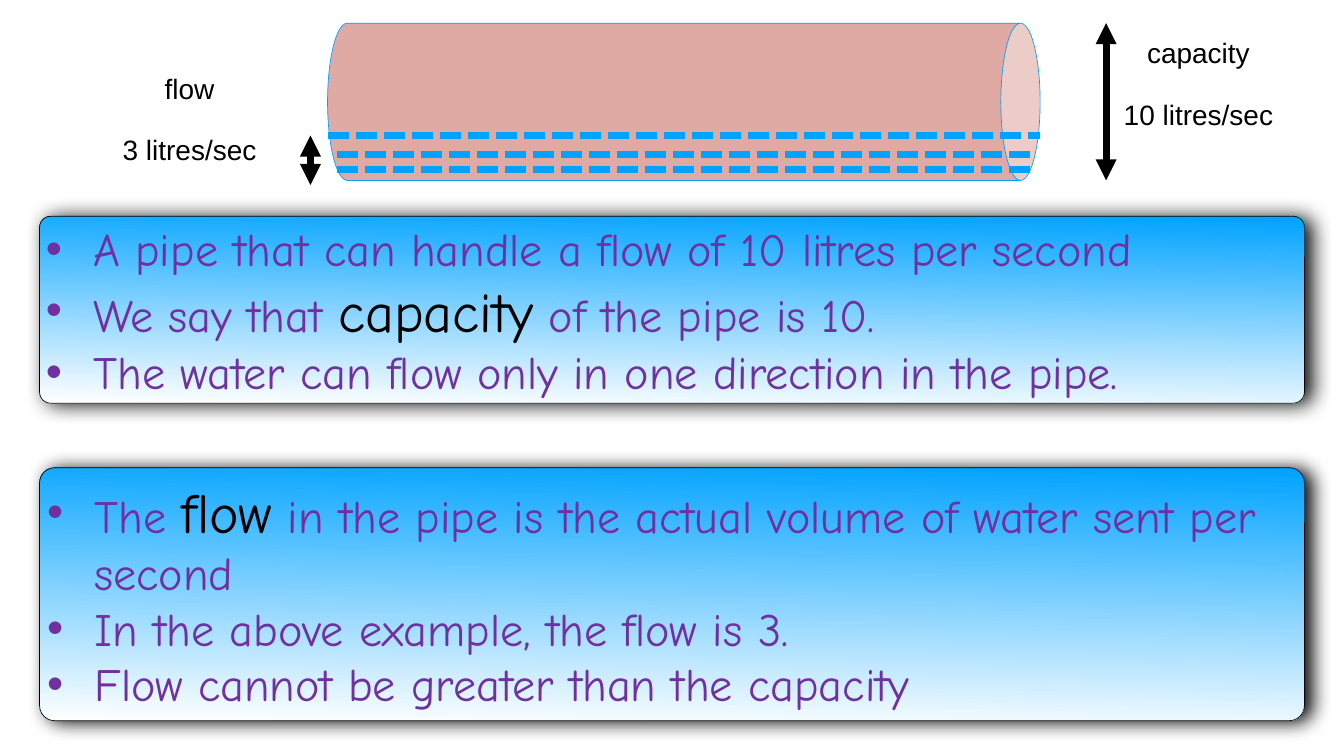
from lxml.etree import SubElement
from pptx import Presentation
from pptx.dml.color import RGBColor
from pptx.enum.dml import MSO_LINE
from pptx.enum.shapes import MSO_CONNECTOR, MSO_SHAPE
from pptx.enum.text import MSO_ANCHOR, PP_ALIGN
from pptx.oxml.ns import qn
from pptx.util import Inches, Pt

# Content: each paragraph is a list of (text, is key term) runs
LABELS = [  # centre x, centre y, lines
    (23.78, 1.7, ["capacity", "10 litres/sec"]),
    (3.76, 2.4, ["flow", "3 litres/sec"]),
]
PANELS = [  # top, height, paragraphs
    (4.29, 3.71, [
        [("A pipe that can handle a flow of 10 litres per second", False)],
        [("We say that ", False), ("capacity", True), (" of the pipe is 10.", False)],
        [("The water can flow only in one direction in the pipe.", False)],
    ]),
    (9.28, 5.02, [
        [("The ", False), ("flow", True),
         (" in the pipe is the actual volume of water sent per second", False)],
        [("In the above example, the flow is 3.", False)],
        [("Flow cannot be greater than the capacity", False)],
    ]),
]

# Style and layout, in inches
COLORS = {"water": "00A2FF", "pipe": "A61500", "text": "7030A0",
          "black": "000000", "white": "FFFFFF"}
W, H = 26.67, 15
PANEL_W = 25.1
PANEL_X = (W - PANEL_W) / 2
PIPE_X, PIPE_Y, PIPE_W, PIPE_H = 6.5, 0.46, 14.14, 3.12
WATER = [(2.69, 0), (3.07, 0.18), (3.37, 0.18)]  # y, inset from the pipe's ends
ARROWS = [(21.95, PIPE_Y, PIPE_Y + PIPE_H), (6.16, WATER[0][0], 3.67)]
LABEL_W, LABEL_H = 3.2, 2.59
PAD, INDENT = 0.06, 0.94


def rgb(name):
    return RGBColor.from_string(COLORS[name])


def add_run(p, text, font="Arial", size=40, color="black"):
    r = p.add_run()
    r.text = text
    r.font.name, r.font.size = font, Pt(size)
    r.font.color.rgb = rgb(color)


def setup_frame(sp, wrap):
    tf = sp.text_frame
    tf.word_wrap = wrap
    tf.vertical_anchor = MSO_ANCHOR.MIDDLE
    tf.margin_left = tf.margin_right = tf.margin_top = tf.margin_bottom = Inches(PAD)
    return tf


def paragraphs(tf, items):
    for i, item in enumerate(items):
        yield i, (tf.add_paragraph() if i else tf.paragraphs[0]), item


def add_line(shapes, x1, y1, x2, y2, color, dash=None, arrows=False):
    cn = shapes.add_connector(MSO_CONNECTOR.STRAIGHT,
                              Inches(x1), Inches(y1), Inches(x2), Inches(y2))
    cn.line.width = Pt(10)
    cn.line.color.rgb = rgb(color)
    if dash:
        cn.line.dash_style = dash
    if arrows:
        ln = cn.line._get_or_add_ln()
        for end in ("a:headEnd", "a:tailEnd"):
            SubElement(ln, qn(end), type="triangle")
    SubElement(cn._element.spPr, qn("a:effectLst"))


def add_shadow(sp):
    effects = SubElement(sp._element.spPr, qn("a:effectLst"))
    shadow = SubElement(effects, qn("a:outerShdw"), blurRad=str(Pt(28)),
                        dist=str(Pt(9)), dir="0", algn="ctr", rotWithShape="0")
    clr = SubElement(shadow, qn("a:srgbClr"), val=COLORS["black"])
    SubElement(clr, qn("a:alpha"), val="97000")


def add_pipe(shapes):
    cx, cy = PIPE_X + PIPE_W / 2, PIPE_Y + PIPE_H / 2
    # The can stands upright, so its sides swap before the turn
    sp = shapes.add_shape(MSO_SHAPE.CAN, Inches(cx - PIPE_H / 2),
                          Inches(cy - PIPE_W / 2), Inches(PIPE_H), Inches(PIPE_W))
    sp.rotation = 90
    sp.shadow.inherit = False
    sp.fill.solid()
    sp.fill.fore_color.rgb = rgb("pipe")
    clr = sp._element.spPr.find(qn("a:solidFill")).find(qn("a:srgbClr"))
    SubElement(clr, qn("a:alpha"), val="36000")
    sp.line.color.rgb = rgb("water")
    sp.line.width = Pt(1)


def add_label(shapes, cx, cy, lines):
    sp = shapes.add_textbox(Inches(cx - LABEL_W / 2), Inches(cy - LABEL_H / 2),
                            Inches(LABEL_W), Inches(LABEL_H))
    tf = setup_frame(sp, wrap=False)
    for i, p, text in paragraphs(tf, lines):
        p.alignment = PP_ALIGN.CENTER
        p.line_spacing = 0.9
        if i:
            p.space_before = Pt(45)
        add_run(p, text)


def add_panel(shapes, top, height, items):
    sp = shapes.add_shape(MSO_SHAPE.ROUNDED_RECTANGLE, Inches(PANEL_X),
                          Inches(top), Inches(PANEL_W), Inches(height))
    sp.adjustments[0] = 0.06
    sp.fill.gradient()
    sp.fill.gradient_angle = 269
    for stop, pos, color in zip(sp.fill.gradient_stops, (0, 1), ("water", "white")):
        stop.position = pos
        stop.color.rgb = rgb(color)
    sp.line.color.rgb = rgb("black")
    sp.line.width = Pt(1)
    add_shadow(sp)
    tf = setup_frame(sp, wrap=True)
    for _, p, runs in paragraphs(tf, items):
        p.alignment = PP_ALIGN.LEFT
        pPr = p._p.get_or_add_pPr()
        pPr.set("marL", str(Inches(INDENT)))
        pPr.set("indent", str(-Inches(INDENT)))
        SubElement(pPr, qn("a:buFont"), typeface="Arial")
        SubElement(pPr, qn("a:buChar"), char="•")
        for text, key in runs:
            add_run(p, text, font="Comic Neue", size=80 if key else 66,
                    color="black" if key else "text")


def main():
    prs = Presentation()
    prs.slide_width, prs.slide_height = Inches(W), Inches(H)
    shapes = prs.slides.add_slide(prs.slide_layouts[6]).shapes

    # Pipe with water and its measuring arrows
    add_pipe(shapes)
    water = shapes.add_group_shape().shapes
    for y, inset in WATER:
        add_line(water, PIPE_X + inset, y, PIPE_X + PIPE_W - inset, y, "water",
                 dash=MSO_LINE.SQUARE_DOT)
    for x, top, bottom in ARROWS:
        add_line(shapes, x, top, x, bottom, "black", arrows=True)

    # Labels and explanation panels
    for label in LABELS:
        add_label(shapes, *label)
    for panel in PANELS:
        add_panel(shapes, *panel)
    prs.save("out.pptx")


if __name__ == "__main__":
    main()
